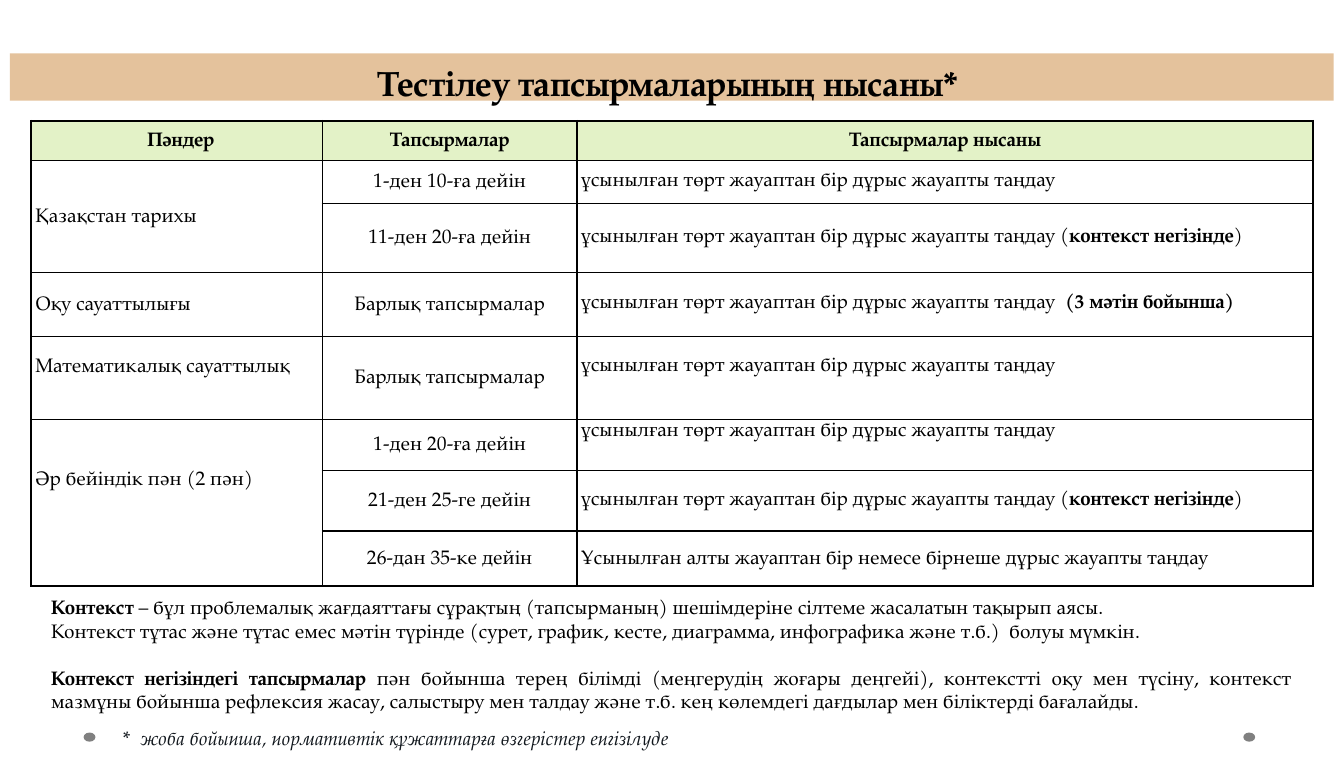
from lxml import etree
from pptx import Presentation
from pptx import util as u
from pptx.dml import color
from pptx.enum import shapes, text
from pptx.oxml import ns

LEFT, CENTER, JUSTIFY = text.PP_ALIGN.LEFT, text.PP_ALIGN.CENTER, text.PP_ALIGN.JUSTIFY
MIDDLE, BOTTOM, TOP = text.MSO_ANCHOR.MIDDLE, text.MSO_ANCHOR.BOTTOM, text.MSO_ANCHOR.TOP
CHOICE = "ұсынылған төрт жауаптан бір дұрыс жауапты таңдау"
IN_CONTEXT = CHOICE + " (**контекст негізінде**)"

COLUMNS = [7.34, 6.43, 18.57]
ROWS = [1, 1.09, 1.73, 1.63, 2.08, 1.3, 1.52, 1.4]
TASKS = [
    ["**Пәндер", "**Тапсырмалар", "**Тапсырмалар нысаны"],
    ["Қазақстан тарихы", "1-ден 10-ға дейін", CHOICE],
    ["", "11-ден 20-ға дейін", IN_CONTEXT],
    ["Оқу сауаттылығы", "Барлық тапсырмалар", CHOICE + "  **(3 мәтін бойынша)"],
    ["Математикалық сауаттылық", "Барлық тапсырмалар", CHOICE],
    ["Әр бейіндік пән (2 пән)", "1-ден 20-ға дейін", CHOICE],
    ["", "21-ден 25-ге дейін", IN_CONTEXT],
    ["", "26-дан 35-ке дейін", "Ұсынылған алты жауаптан бір немесе бірнеше дұрыс жауапты таңдау"],
]
MERGES = [(1, 2), (5, 7)]
RAISED = {(4, 0): 0.56, (4, 2): 0.56, (5, 0): 1.17, (5, 2): 0.66}

DEFINITIONS = [
    "**Контекст** – бұл проблемалық жағдаяттағы сұрақтың (тапсырманың) шешімдеріне сілтеме "
    "жасалатын тақырып аясы.",
    "Контекст тұтас және тұтас емес мәтін түрінде (сурет, график, кесте, диаграмма, "
    "инфографика және т.б.)  болуы мүмкін.",
    "**Контекст негізіндегі тапсырмалар **пән бойынша терең білімді (меңгерудің жоғары "
    "деңгейі), контекстті оқу мен түсіну, контекст мазмұны бойынша рефлексия жасау, "
    "салыстыру мен талдау және т.б. кең көлемдегі дағдылар мен біліктерді бағалайды.",
]


def rgb(value):
    return color.RGBColor.from_string(value)


def assign(target, values):
    for name, value in values.items():
        setattr(target, name, value)


def margins(left, top, right, bottom):
    sides = ("left", "top", "right", "bottom")
    return {f"margin_{side}": u.Cm(size) for side, size in zip(sides, (left, top, right, bottom))}


class Slide:
    font = "TeX Gyre Pagella"
    ink = "000000"
    header = "E3F2C7"
    paper = "FFFFFF"

    def __init__(self, deck):
        self.page = deck.slides.add_slide(deck.slide_layouts[6])

    def shape(self, kind, place, fill):
        figure = self.page.shapes.add_shape(kind, *map(u.Cm, place))
        figure.shadow.inherit = False
        figure.fill.solid()
        figure.fill.fore_color.rgb = rgb(fill)
        figure.line.fill.background()

    def paragraph(self, para, words, layout, size=14, ink=ink, italic=False):
        assign(para, layout)
        for index, part in enumerate(words.split("**")):
            if part:
                span = para.add_run()
                span.text = part
                assign(span.font, {"name": self.font, "size": u.Pt(size),
                                   "bold": index % 2 == 1, "italic": italic})
                span.font.color.rgb = rgb(ink)

    def textbox(self, place, lines, insets, anchor, align, gaps=None, **style):
        frame = self.page.shapes.add_textbox(*map(u.Cm, place)).text_frame
        assign(frame, {"word_wrap": True, "vertical_anchor": anchor, **margins(*insets)})
        for index, words in enumerate(lines):
            para = frame.add_paragraph() if index else frame.paragraphs[0]
            space = u.Pt((gaps or {}).get(index, 0))
            self.paragraph(para, words, {"alignment": align, "space_before": space}, **style)

    def borders(self, cell, outer):
        properties = cell._tc.get_or_add_tcPr()
        for side in "LRTB":
            width = u.Pt(1.5 if side in outer else 1)
            line = etree.SubElement(properties, ns.qn(f"a:ln{side}"), w=str(width))
            fill = etree.SubElement(line, ns.qn("a:solidFill"))
            etree.SubElement(fill, ns.qn("a:srgbClr"), val=self.ink)

    def table(self, left, top, columns, rows, contents, merges, raised):
        place = map(u.Cm, (left, top, sum(columns), sum(rows)))
        grid = self.page.shapes.add_table(len(rows), len(columns), *place).table
        assign(grid, {"first_row": False, "horz_banding": False})
        for column, width in zip(grid.columns, columns):
            column.width = u.Cm(width)
        for row, height in zip(grid.rows, rows):
            row.height = u.Cm(height)
        for first, last in merges:
            grid.cell(first, 0).merge(grid.cell(last, 0))
        last_row, last_column = len(rows) - 1, len(columns) - 1
        for r, row in enumerate(contents):
            for c, words in enumerate(row):
                cell = grid.cell(r, c)
                end = r + (cell.span_height if cell.is_merge_origin else 1) - 1
                edges = {"L": c == 0, "R": c == last_column, "T": r == 0, "B": end == last_row}
                self.borders(cell, [side for side, outer in edges.items() if outer])
                cell.fill.solid()
                cell.fill.fore_color.rgb = rgb(self.paper if r else self.header)
                indent = 0.3 if r == c == 0 else 0.1
                insets = margins(indent, 0, 0.1, raised.get((r, c), 0))
                assign(cell, {"vertical_anchor": MIDDLE, **insets})
                align = (LEFT, CENTER, JUSTIFY)[c] if r else CENTER
                spacing = 1.0 if c == last_column and 0 < r < last_row else 1.15
                self.paragraph(cell.text_frame.paragraphs[0], words,
                               {"alignment": align, "line_spacing": spacing})


def main():
    deck = Presentation()
    assign(deck, {"slide_width": u.Cm(33.91), "slide_height": u.Cm(19.51)})
    slide = Slide(deck)
    for left in (31.37, 2.11):
        slide.shape(shapes.MSO_SHAPE.OVAL, (left, 18.49, 0.3, 0.23), "808080")
    slide.shape(shapes.MSO_SHAPE.RECTANGLE, (0.25, 1.35, 33.4, 1.19), "E4C29C")
    slide.textbox((-0.1, 0.81, 33.91, 1.96), ["**Тестілеу тапсырмаларының нысаны*"],
                  (0.3, 0.15, 0.3, 0.15), BOTTOM, CENTER, size=25)
    slide.textbox((2.95, 18.11, 23, 1.04),
                  ["*  жоба бойынша, нормативтік құжаттарға өзгерістер енгізілуде"],
                  (0.15, 0.15, 0.3, 0.15), MIDDLE, LEFT, ink="11171D", italic=True)
    slide.table(0.79, 3.05, COLUMNS, ROWS, TASKS, MERGES, RAISED)
    slide.textbox((1.04, 14.89, 31.8, 3.25), DEFINITIONS,
                  (0.25, 0.13, 0.25, 0.13), TOP, JUSTIFY, gaps={2: 16.8})
    deck.save("out.pptx")


if __name__ == "__main__":
    main()
